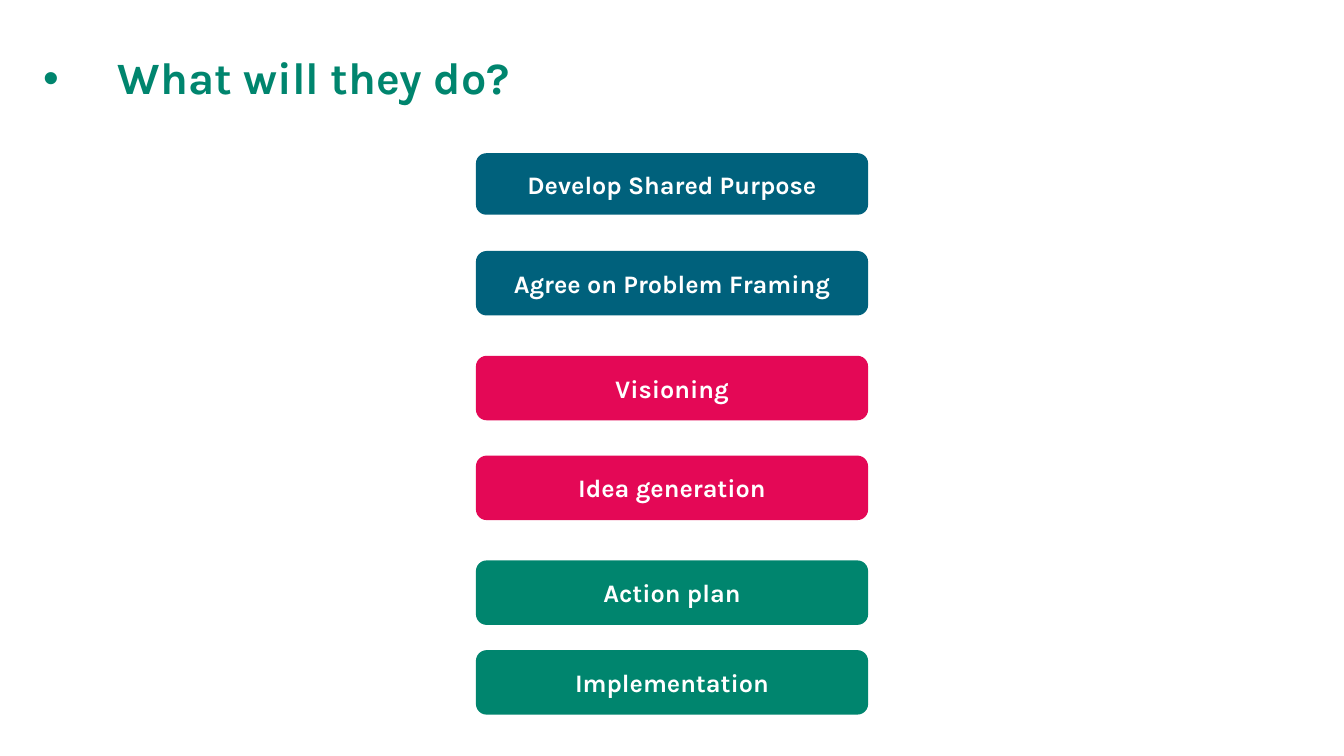
from lxml import etree
from pptx import Presentation
from pptx.dml.color import RGBColor
from pptx.enum.shapes import MSO_SHAPE
from pptx.enum.text import MSO_ANCHOR, PP_ALIGN
from pptx.oxml.ns import qn
from pptx.util import Inches, Pt

ROUNDED = MSO_SHAPE.ROUNDED_RECTANGLE
MIDDLE = MSO_ANCHOR.MIDDLE
CENTER = PP_ALIGN.CENTER

COLORS = {"blue": "00617C", "pink": "E40856", "green": "00856E", "white": "FFFFFF"}

# Label, colour, top and height of each step
STEPS = [
    ("Develop Shared Purpose", "blue", 1.52, 0.61),
    ("Agree on Problem Framing", "blue", 2.49, 0.64),
    ("Visioning", "pink", 3.53, 0.64),
    ("Idea generation", "pink", 4.52, 0.64),
    ("Action plan", "green", 5.56, 0.64),
    ("Implementation", "green", 6.45, 0.64),
]
STEP_LEFT, STEP_WIDTH = 4.72, 3.89


class SlideBuilder:
    """Holds the style and the current slide."""

    font_name = "Karla"

    def __init__(self, slide):
        self.slide = slide

    def color(self, name):
        return RGBColor.from_string(COLORS[name])

    def set_text(self, shape, text, size, color):
        frame = shape.text_frame
        frame.word_wrap = True
        frame.vertical_anchor = MIDDLE
        para = frame.paragraphs[0]
        para.text = text
        font = para.font
        font.name = self.font_name
        font.size = Pt(size)
        font.bold = True
        font.color.rgb = self.color(color)
        return para

    def title(self, text, left, top, width, height, indent):
        box = self.slide.shapes.add_textbox(
            Inches(left), Inches(top), Inches(width), Inches(height))
        # The bullet goes in before the font settings
        properties = box.text_frame.paragraphs[0]._p.get_or_add_pPr()
        properties.set("marL", str(Inches(indent)))
        properties.set("indent", str(-Inches(indent)))
        etree.SubElement(properties, qn("a:buFont")).set("typeface", "Arial")
        etree.SubElement(properties, qn("a:buChar")).set("char", "•")
        para = self.set_text(box, text, 32, "green")
        para.line_spacing = 0.9

    def step(self, label, color, top, height):
        box = self.slide.shapes.add_shape(
            ROUNDED, Inches(STEP_LEFT), Inches(top), Inches(STEP_WIDTH), Inches(height))
        box.shadow.inherit = False
        box.fill.solid()
        box.fill.fore_color.rgb = self.color(color)
        box.line.fill.background()
        self.set_text(box, label, 18, "white").alignment = CENTER


def main():
    deck = Presentation()
    deck.slide_width, deck.slide_height = Inches(13.33), Inches(7.5)
    builder = SlideBuilder(deck.slides.add_slide(deck.slide_layouts[6]))

    # Heading
    builder.title("What will they do?", 0.33, 0.07, 11.5, 1.45, indent=0.74)

    # Steps from top to bottom
    for step in STEPS:
        builder.step(*step)

    deck.save("out.pptx")


if __name__ == "__main__":
    main()
